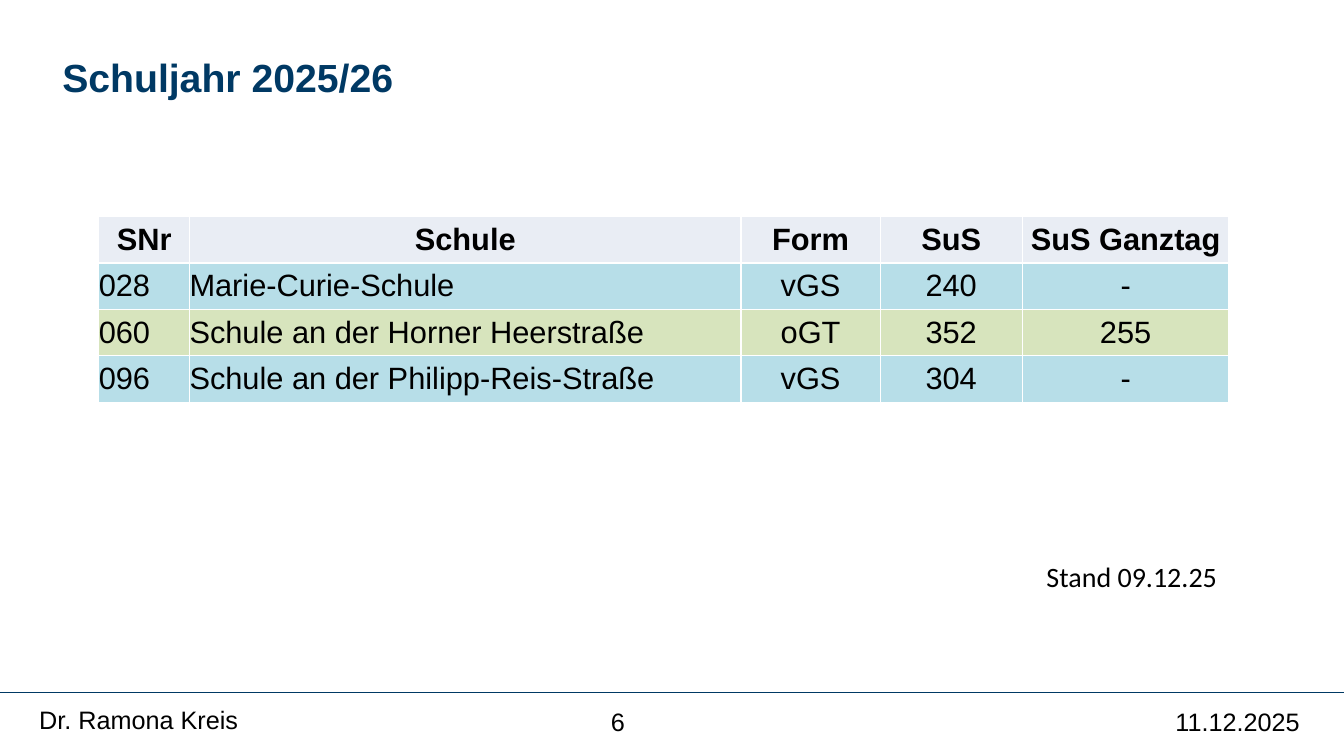
import pptx
import pptx.util
import pptx.dml.color
import pptx.enum.shapes
import pptx.enum.text
from lxml import etree

W, H = 13.33, 7.5
NAVY, BLACK, WHITE = "003964", "000000", "FFFFFF"
HEADER, BLUE, GREEN = "E9EDF4", "B7DEE8", "D7E4BD"
COLS = [0.9, 5.47, 1.38, 1.41, 2.05]
ROWS = [
    (HEADER, ["SNr", "Schule", "Form", "SuS", "SuS Ganztag"]),
    (BLUE, ["028", "Marie-Curie-Schule", "vGS", "240", "-"]),
    (GREEN, ["060", "Schule an der Horner Heerstraße", "oGT", "352", "255"]),
    (BLUE, ["096", "Schule an der Philipp-Reis-Straße", "vGS", "304", "-"]),
]
inch = pptx.util.Inches


def color(value):
    return pptx.dml.color.RGBColor.from_string(value)


def write(tf, text, size, ink=BLACK, bold=False, font="Arial"):
    p = tf.paragraphs[0]
    p.text = text
    r = p.runs[0]
    r.font.name, r.font.size, r.font.bold = font, pptx.util.Pt(size), bold
    r.font.color.rgb = color(ink)
    return p


def add_text(s, box, text, size, wrap=True, **style):
    tf = s.shapes.add_textbox(*map(inch, box)).text_frame
    tf.word_wrap = wrap
    write(tf, text, size, **style)


def add_borders(cell):
    tcPr = cell._tc.get_or_add_tcPr()
    ns = pptx.oxml.ns.qn
    for i, side in enumerate(("a:lnL", "a:lnR", "a:lnT", "a:lnB")):
        ln = etree.Element(ns(side), w="12700")
        fill = etree.SubElement(ln, ns("a:solidFill"))
        etree.SubElement(fill, ns("a:srgbClr"), val=WHITE)
        tcPr.insert(i, ln)


def school_table(s, box):
    x, y, w, h = box
    frame = s.shapes.add_table(len(ROWS), len(COLS), *map(inch, box))
    table = frame.table
    for col, width in zip(table.columns, COLS):
        col.width = inch(w * width / sum(COLS))
    for row, (fill, values) in enumerate(ROWS):
        table.rows[row].height = inch(h / len(ROWS))
        for col, value in enumerate(values):
            cell = table.cell(row, col)
            cell.fill.solid()
            cell.fill.fore_color.rgb = color(fill)
            cell.margin_left = cell.margin_right = 0
            cell.margin_top = cell.margin_bottom = 0
            cell.vertical_anchor = pptx.enum.text.MSO_ANCHOR.MIDDLE
            p = write(cell.text_frame, value, 22, bold=row == 0)
            if row == 0 or col > 1:
                p.alignment = pptx.enum.text.PP_ALIGN.CENTER
            add_borders(cell)


def footer(s, box):
    x, y, w, h = box
    # Rule across the slide
    rule = s.shapes.add_connector(pptx.enum.shapes.MSO_CONNECTOR.STRAIGHT,
                                  inch(x), inch(y), inch(x + w), inch(y))
    rule.line.color.rgb = color(NAVY)
    rule.line.width = pptx.util.Pt(1)
    etree.SubElement(rule._element.spPr, pptx.oxml.ns.qn("a:effectLst"))
    # Author, page number, date
    add_text(s, (x + 0.29, y + 0.07, 3.08, 0.44), "Dr. Ramona Kreis", 18)
    add_text(s, (x + 5.96, y + 0.09, 0.69, 0.4), "6", 18, wrap=False)
    add_text(s, (x + w - 1.77, y + 0.09, 1.6, 0.44), "11.12.2025", 18)


def main():
    prs = pptx.Presentation()
    prs.slide_width, prs.slide_height = inch(W), inch(H)
    s = prs.slides.add_slide(prs.slide_layouts[6])
    footer(s, (0, 6.87, W, H - 6.87))
    school_table(s, (0.98, 2.15, 11.21, 1.84))
    # Title and status date
    add_text(s, (0.52, 0.48, 8.23, 0.61), "Schuljahr 2025/26", 28, ink=NAVY, bold=True)
    add_text(s, (10.28, 5.5, 1.91, 0.44), "Stand 09.12.25", 20, wrap=False, font="Calibri")
    prs.save("out.pptx")


if __name__ == "__main__":
    main()
